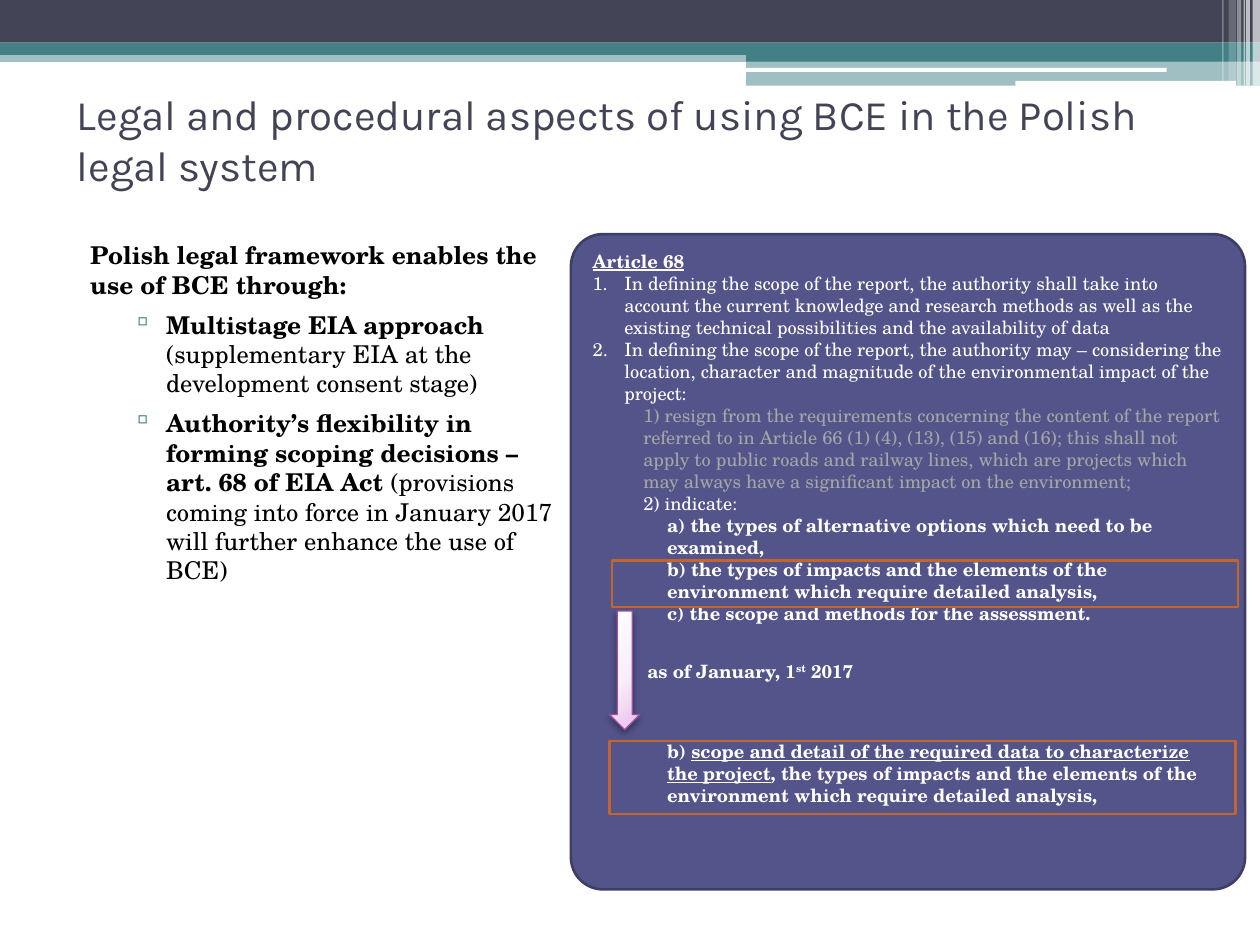
"""Build a slide on the legal aspects of using BCE in Poland."""
from lxml.etree import SubElement
from pptx import Presentation
from pptx.dml.color import RGBColor
from pptx.enum.shapes import MSO_SHAPE as Shape
from pptx.enum.text import MSO_ANCHOR as Anchor, PP_ALIGN as Align
from pptx.oxml import parse_xml
from pptx.oxml.ns import nsdecls, qn
from pptx.util import Cm, Pt

COLORS = {
    "dark": "424456", "teal": "438086", "white": "FFFFFF", "black": "000000",
    "panel": "53548A", "panel_line": "3D3E66", "grey": "A6A6A6",
    "orange": "C4652D", "purple": "A04DA3",
    "glow": "FEFEFF", "pale": "F9EFF9", "pink": "E8BBEA",
}
SERIF, SANS = "TeX Gyre Schola", "Karla"

BANDS = [
    (0, 1.02, 25.4, 0.23, "teal", 50),
    (0, 0, 25.4, 0.86, "dark", 100),
    (0, 0.86, 25.4, 0.25, "teal", 100),
    (15.04, 0.99, 10.36, 0.25, "teal", 100),
    (15.04, 1.22, 10.36, 0.51, "teal", 50),
]
PILLS = [(15.01, 1.37, 8.51, 0.08), (20.47, 1.63, 4.45, 0.1)]
STRIPES = [
    (25.25, 0.15, 1.73, 65), (25.12, 0.08, 1.73, 65), (25.07, 0.03, 1.73, 60),
    (24.94, 0.08, 1.73, 40), (24.77, 0.15, 1.63, 20), (24.64, 0.03, 1.63, 30),
]

BULLET = dict(left=1.83, hang=0.69, bullet="▫")
NUMBER = dict(left=0.64, hang=0.64, bullet="number")
POINT = dict(left=1.02)
LETTER = dict(left=1.5)
BOLD, UNDERLINED = dict(bold=True), dict(bold=True, underline=True)

FRAMEWORK = [
    ([("Polish legal framework enables the use of BCE through:", BOLD)], dict(left=0.3)),
    ([("Multistage EIA approach ", BOLD),
      ("(supplementary EIA at the development consent stage)", {})], BULLET),
    ([("Authority’s flexibility in forming scoping decisions – art. 68 of EIA Act ", BOLD),
      ("(provisions coming into force in January 2017 will further enhance "
       "the use of BCE)", {})], BULLET),
]
ARTICLE = [
    ([("Article 68", UNDERLINED)], {}),
    ([("In defining the scope of the report, the authority shall take into account "
       "the current knowledge and research methods as well as the existing technical "
       "possibilities and the availability of data", {})], NUMBER),
    ([("In defining the scope of the report, the authority may – considering the "
       "location, character and magnitude of the environmental impact of the "
       "project:", {})], NUMBER),
    ([("1) resign from the requirements concerning the content of the report referred "
       "to in Article 66 (1) (4), (13), (15) and (16); this shall not apply to public "
       "roads and railway lines, which are projects which may always have a "
       "significant impact on the environment;", dict(color="grey"))], POINT),
    ([("2) indicate:", {})], POINT),
    ([("a) the types of alternative options which need to be examined,", BOLD)], LETTER),
    ([("b) the types of impacts and the elements of the environment which require "
       "detailed analysis,", BOLD)], LETTER),
    ([("c) the scope and methods for the assessment.", BOLD)], LETTER),
    ([("b) ", BOLD),
      ("scope and detail of the required data to characterize the project", UNDERLINED),
      (", the types of impacts and the elements of the environment which require "
       "detailed analysis,", BOLD)], dict(left=1.5, before=66.3)),
]
TITLE = [([("Legal and procedural aspects of using BCE in the Polish legal system", {})], {})]
DATE = [([("as of January, 1", BOLD), ("st", dict(bold=True, raised=True)),
          (" 2017", BOLD)], {})]


def rgb(name):
    """Return the named colour."""
    return RGBColor.from_string(COLORS[name])


def add_box(page, kind, place, fill=None, alpha=100, line=None, width=1.5, adjust=None):
    """Add a preset shape with an optional fill and outline."""
    box = page.shapes.add_shape(kind, *map(Cm, place))
    box.shadow.inherit = False
    if adjust is not None:
        box.adjustments[0] = adjust
    if fill:
        box.fill.solid()
        box.fill.fore_color.rgb = rgb(fill)
        if alpha < 100:
            color = box._element.spPr.find(qn("a:solidFill"))[0]
            SubElement(color, qn("a:alpha"), val=str(alpha * 1000))
    else:
        box.fill.background()
    if line:
        box.line.color.rgb = rgb(line)
        box.line.width = Pt(width)
    else:
        box.line.fill.background()
    return box


def set_layout(para, left=0, hang=0, bullet=None, before=0, after=0):
    """Set the indent, spacing and bullet of a paragraph."""
    para.alignment = Align.LEFT
    para.space_before, para.space_after = Pt(before), Pt(after)
    props = para._p.get_or_add_pPr()
    props.set("marL", str(Cm(left)))
    props.set("indent", str(Cm(-hang)))
    if bullet == "number":
        SubElement(props, qn("a:buAutoNum"), type="arabicPeriod")
    elif bullet:
        tint = SubElement(props, qn("a:buClr"))
        SubElement(tint, qn("a:srgbClr"), val=COLORS["teal"])
        SubElement(props, qn("a:buChar"), char=bullet)


def add_span(para, text, font, size, color, bold=False, underline=False, raised=False):
    """Add a formatted run to a paragraph."""
    span = para.add_run()
    span.text = text
    span.font.name, span.font.size = font, Pt(size)
    span.font.color.rgb = rgb(color)
    span.font.bold, span.font.underline = bold, underline
    if raised:
        span._r.get_or_add_rPr().set("baseline", "30000")


def write(box, paragraphs, font=SERIF, size=10.5, color="white", anchor=Anchor.TOP, spacing=0):
    """Fill a shape with formatted paragraphs."""
    frame = box.text_frame
    frame.word_wrap = True
    frame.vertical_anchor = anchor
    for index, (spans, layout) in enumerate(paragraphs):
        para = frame.add_paragraph() if index else frame.paragraphs[0]
        set_layout(para, **{"before": spacing, "after": spacing, **layout})
        for text, style in spans:
            add_span(para, text, **{"font": font, "size": size, "color": color, **style})


def add_text(page, place, paragraphs, **style):
    """Add a text box."""
    write(page.shapes.add_textbox(*map(Cm, place)), paragraphs, **style)


def add_header(page):
    """Draw the bands, pills and stripes across the top."""
    for *place, color, alpha in BANDS:
        add_box(page, Shape.RECTANGLE, place, color, alpha)
    for place in PILLS:
        add_box(page, Shape.ROUNDED_RECTANGLE, place, "white")
    for left, width, height, alpha in STRIPES:
        add_box(page, Shape.RECTANGLE, (left, 0, width, height), "white", alpha)


def add_glowing_arrow(page, place):
    """Add a down arrow with a radial gradient and a soft shadow."""
    arrow = add_box(page, Shape.DOWN_ARROW, place, line="purple", width=0.75)
    props = arrow._element.spPr
    stops = "".join(
        f'<a:gs pos="{share * 1000}"><a:srgbClr val="{COLORS[name]}"/></a:gs>'
        for share, name in ((0, "glow"), (55, "pale"), (100, "pink")))
    props.replace(props.find(qn("a:noFill")), parse_xml(
        f'<a:gradFill {nsdecls("a")} rotWithShape="1"><a:gsLst>{stops}</a:gsLst>'
        '<a:path path="circle"><a:fillToRect l="-40000" t="-90000" r="140000" b="190000"/>'
        '</a:path></a:gradFill>'))
    shadow = SubElement(props.find(qn("a:effectLst")), qn("a:outerShdw"),
                        blurRad=str(Pt(4.1)), dist=str(Pt(2)), dir="5400000", rotWithShape="0")
    tint = SubElement(shadow, qn("a:srgbClr"), val=COLORS["black"])
    SubElement(tint, qn("a:alpha"), val="40000")


def main():
    """Build and save the deck."""
    deck = Presentation()
    deck.slide_width, deck.slide_height = Cm(25.4), Cm(19.05)
    page = deck.slides.add_slide(deck.slide_layouts[6])
    add_header(page)
    add_text(page, (1.27, 4.72, 10.24, 13.54), FRAMEWORK, size=14, color="black", spacing=3)
    panel = add_box(page, Shape.ROUNDED_RECTANGLE, (11.51, 4.72, 13.59, 13.21),
                    "panel", line="panel_line", adjust=0.049)
    write(panel, ARTICLE)
    add_text(page, (1.3, 1.32, 22.86, 2.97), TITLE, font=SANS, size=24, color="dark",
             anchor=Anchor.MIDDLE)
    for place in ((12.34, 11.3, 12.62, 0.94), (12.29, 14.94, 12.62, 1.47)):
        add_box(page, Shape.RECTANGLE, place, line="orange")
    add_glowing_arrow(page, (12.29, 12.32, 0.61, 2.39))
    add_text(page, (12.8, 13.18, 7.01, 0.71), DATE)
    deck.save("out.pptx")


if __name__ == "__main__":
    main()
